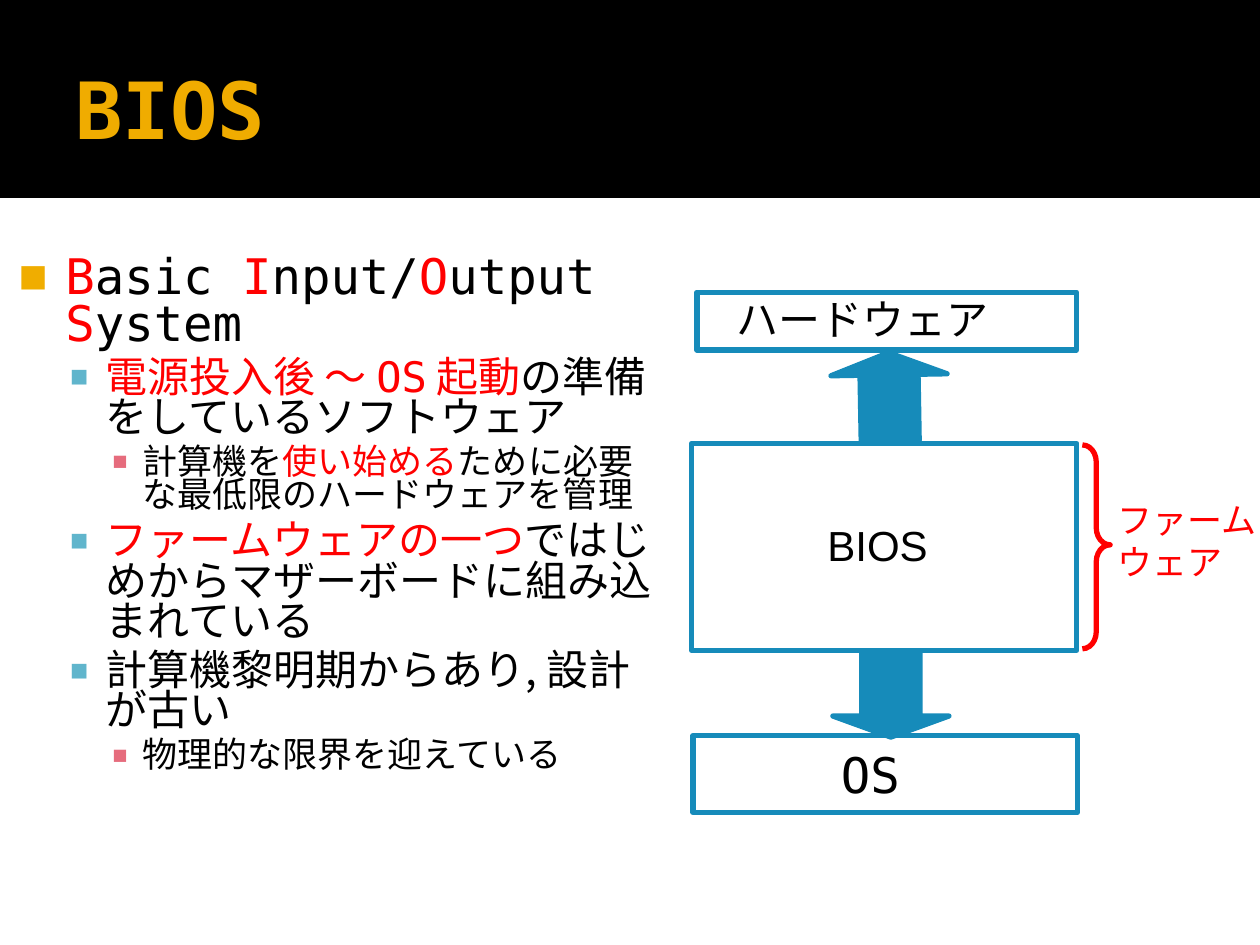
from dataclasses import dataclass

from lxml.etree import SubElement as Sub
from pptx import Presentation
from pptx.dml.color import RGBColor as RGB
from pptx.enum.shapes import MSO_SHAPE as SHAPE
from pptx.enum.text import MSO_ANCHOR as ANCHOR, PP_ALIGN as ALIGN
from pptx.oxml.ns import qn
from pptx.util import Cm, Pt


@dataclass(frozen=True)
class Theme:
    """Hold the colours, fonts and type sizes."""
    black: str = "000000"
    white: str = "FFFFFF"
    gold: str = "F0AC00"
    red: str = "FF0000"
    blue: str = "168BBA"
    mono: str = "DejaVu Sans Mono"
    sans: str = "Arial"
    kana: str = "Noto Sans CJK JP"
    title: int = 45
    large: int = 28
    mid: int = 24
    small: int = 20
    line: int = 3


T = Theme()

LEVELS = (
    (T.large, 1.22, 0.89, 0, "■", "F0AD00", 80),
    (T.mid, 2.03, 0.76, 5, "▪", "60B5CC", 90),
    (T.small, 2.77, 0.64, 4, "▪", "E66C7D", 90),
)

POINTS = (
    (0, (("B", T.red, T.mono), ("asic ", T.black, T.mono),
         ("I", T.red, T.mono), ("nput/", T.black, T.mono),
         ("O", T.red, T.mono), ("utput ", T.black, T.mono),
         ("S", T.red, T.mono), ("ystem", T.black, T.mono))),
    (1, (("電源投入後 ～ ", T.red, T.kana), ("OS", T.red, T.mono),
         (" 起動", T.red, T.kana),
         ("の準備をしているソフトウェア", T.black, T.kana))),
    (2, (("計算機を", T.black, T.kana), ("使い始める", T.red, T.kana),
         ("ために必要な最低限のハードウェアを管理", T.black, T.kana))),
    (1, (("ファームウェアの一つ", T.red, T.kana),
         ("ではじめからマザーボードに組み込まれている", T.black, T.kana))),
    (1, (("計算機黎明期からあり, 設計が古い", T.black, T.kana),)),
    (2, (("物理的な限界を迎えている", T.black, T.kana),)),
)


def style(run, size, color, face):
    """Format one run, with a Japanese fallback face."""
    font = run.font
    font.size = Pt(size)
    font.color.rgb = RGB.from_string(color)
    font.name = face
    Sub(run._r.get_or_add_rPr(), qn("a:ea"), typeface=T.kana)


def draw(slide, kind, box, fill=None, line=None):
    """Add a flat shape in the box."""
    shape = slide.shapes.add_shape(kind, *map(Cm, box))
    shape.shadow.inherit = False
    if fill:
        shape.fill.solid()
        shape.fill.fore_color.rgb = RGB.from_string(fill)
    else:
        shape.fill.background()
    if line:
        shape.line.color.rgb = RGB.from_string(line)
        shape.line.width = Pt(T.line)
    else:
        shape.line.fill.background()
    return shape


def write(slide, box, text, size, color, face, wrap=True):
    """Add a text box and return its frame."""
    frame = slide.shapes.add_textbox(*map(Cm, box)).text_frame
    frame.word_wrap = wrap
    frame.text = text
    for para in frame.paragraphs:
        for run in para.runs:
            style(run, size, color, face)
    return frame


def bullet(para, level):
    """Set the indent, spacing and bullet of a level."""
    size, left, hang, gap, mark, color, scale = LEVELS[level]
    para.level = level
    para.line_spacing = 0.8
    para.space_before = Pt(gap)
    props = para._p.get_or_add_pPr()
    props.set("marL", str(Cm(left)))
    props.set("indent", str(-Cm(hang)))
    Sub(Sub(props, qn("a:buClr")), qn("a:srgbClr"), val=color)
    Sub(props, qn("a:buSzPct"), val=str(scale * 1000))
    Sub(props, qn("a:buFont"), typeface=T.mono)
    Sub(props, qn("a:buChar"), char=mark)
    return size


def header(slide, box):
    """Draw the black band and its title."""
    left, top, width, height = box
    draw(slide, SHAPE.RECTANGLE, box, T.black)
    area = (left + 1.27, top + 0.43, width - 2.54, height - 0.51)
    frame = write(slide, area, "BIOS", T.title, T.gold, T.mono)
    frame.vertical_anchor = ANCHOR.MIDDLE
    frame.paragraphs[0].runs[0].font.bold = True


def outline(slide, box):
    """Write the bulleted points."""
    frame = slide.shapes.add_textbox(*map(Cm, box)).text_frame
    frame.word_wrap = True
    frame.margin_left, frame.margin_top = Cm(0.15), Cm(0.25)
    for order, (level, spans) in enumerate(POINTS):
        para = frame.add_paragraph() if order else frame.paragraphs[0]
        size = bullet(para, level)
        for text, color, face in spans:
            run = para.add_run()
            run.text = text
            style(run, size, color, face)


def diagram(slide, box):
    """Draw the layers from hardware down to the OS."""
    left, top = box[:2]

    def at(x, y, wide, high):
        """Shift a box into the diagram."""
        return left + x, top + y, wide, high

    base = draw(slide, SHAPE.RECTANGLE, at(0.03, 9.04, 7.75, 1.55),
                T.white, T.blue)
    base.text_frame.text = "OS "
    para = base.text_frame.paragraphs[0]
    para.alignment = ALIGN.CENTER
    style(para.runs[0], T.large, T.black, T.mono)

    draw(slide, SHAPE.RECTANGLE, at(0.11, 0.1, 7.65, 1.17), line=T.blue)
    write(slide, at(0.66, 0, 6.27, 1.27), "ハードウェア",
          T.mid, T.black, T.sans, False)
    draw(slide, SHAPE.RECTANGLE, at(0, 3.15, 7.77, 4.17), line=T.blue)
    write(slide, at(2.49, 4.55, 4.14, 1.96), "BIOS",
          T.mid, T.black, T.sans)

    for x, y, high, turn in ((2.85, 7.37, 1.7, 0), (2.82, 1.32, 1.78, 179)):
        arrow = draw(slide, SHAPE.DOWN_ARROW, at(x, y, 2.34, high),
                     T.blue, T.blue)
        arrow.adjustments[0], arrow.adjustments[1] = 0.5, 0.25
        arrow.rotation = turn

    write(slide, at(8.34, 4.14, 3.33, 1.96), "ファーム\nウェア",
          T.small, T.red, T.sans, False)
    brace = draw(slide, SHAPE.RIGHT_BRACE, at(7.88, 3.18, 0.56, 4.11),
                 line=T.red)
    brace.adjustments[0], brace.adjustments[1] = 0.61, 0.49


def main():
    """Build and save the slide."""
    deck = Presentation()
    deck.slide_width, deck.slide_height = Cm(25.4), Cm(19.05)
    slide = deck.slides.add_slide(deck.slide_layouts[6])
    header(slide, (0, 0, 25.4, 3.99))
    outline(slide, (-0.05, 4.93, 13.64, 12.85))
    diagram(slide, (13.94, 5.79, 11.67, 10.59))
    deck.save("out.pptx")


if __name__ == "__main__":
    main()
